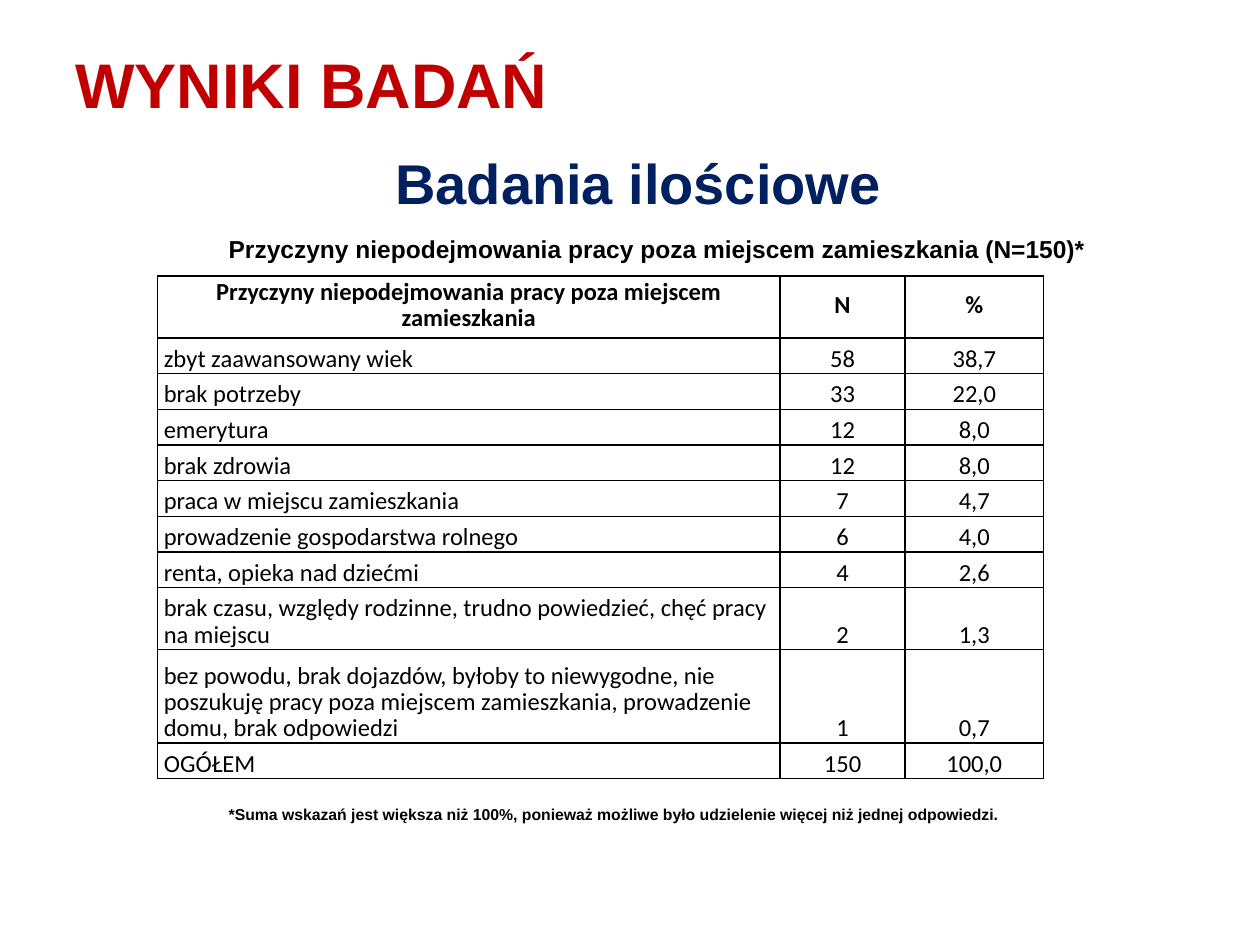
from lxml import etree
from pptx import Presentation
from pptx import util as u
from pptx.dml.color import RGBColor
from pptx.enum import text
from pptx.oxml import ns

PX = u.Inches(1) // 120
COLORS = {"title": "C00000", "subtitle": "002060", "text": "000000"}
ALIGN, ANCHOR = text.PP_ALIGN, text.MSO_ANCHOR

COLUMN_WIDTHS = [593, 119, 132]
ROW_HEIGHTS = [59] + [34] * 7 + [59, 89, 34]
ROWS = [
    ("Przyczyny niepodejmowania pracy poza miejscem zamieszkania", "N", "%"),
    ("zbyt zaawansowany wiek", "58", "38,7"),
    ("brak potrzeby", "33", "22,0"),
    ("emerytura", "12", "8,0"),
    ("brak zdrowia", "12", "8,0"),
    ("praca w miejscu zamieszkania", "7", "4,7"),
    ("prowadzenie gospodarstwa rolnego", "6", "4,0"),
    ("renta, opieka nad dziećmi", "4", "2,6"),
    ("brak czasu, względy rodzinne, trudno powiedzieć, chęć pracy na miejscu", "2", "1,3"),
    ("bez powodu, brak dojazdów, byłoby to niewygodne, nie poszukuję pracy poza miejscem "
     "zamieszkania, prowadzenie domu, brak odpowiedzi", "1", "0,7"),
    ("OGÓŁEM", "150", "100,0"),
]


def to_emu(*lengths):
    return [length * PX for length in lengths]


def set_all(target, values):
    for name, value in values.items():
        setattr(target, name, value)


def write(para, words, color="text", **font):
    span = para.add_run()
    span.text = words
    set_all(span.font, font)
    span.font.color.rgb = RGBColor.from_string(COLORS[color])


def add_text(page, box, words, size, color="text", align=ALIGN.LEFT):
    frame = page.shapes.add_textbox(*to_emu(*box)).text_frame
    set_all(frame, {"word_wrap": True, "vertical_anchor": ANCHOR.MIDDLE})
    para = frame.paragraphs[0]
    para.alignment = align
    write(para, words, color, name="Arial", size=u.Pt(size), bold=True)


def add_borders(cell):
    properties = cell._tc.get_or_add_tcPr()
    for position, side in enumerate(("lnL", "lnR", "lnT", "lnB")):
        line = etree.Element(ns.qn(f"a:{side}"), w=str(u.Pt(1)))
        fill = etree.SubElement(line, ns.qn("a:solidFill"))
        etree.SubElement(fill, ns.qn("a:srgbClr"), val=COLORS["text"])
        properties.insert(position, line)


def fill_cell(cell, words, header, centered):
    cell.fill.background()
    set_all(cell, {
        "margin_left": 6 * PX, "margin_right": 6 * PX, "margin_top": 0, "margin_bottom": 0,
        "vertical_anchor": ANCHOR.MIDDLE if header else ANCHOR.BOTTOM,
    })
    para = cell.text_frame.paragraphs[0]
    set_all(para, {"alignment": ALIGN.CENTER if centered else ALIGN.LEFT,
                   "line_spacing": u.Pt(15)})
    write(para, words, name="Calibri", size=u.Pt(14), bold=header)
    add_borders(cell)


def add_reasons_table(page, left, top):
    box = to_emu(left, top, sum(COLUMN_WIDTHS), sum(ROW_HEIGHTS))
    table = page.shapes.add_table(len(ROWS), len(COLUMN_WIDTHS), *box).table
    set_all(table, {"first_row": False, "horz_banding": False})
    for column, width in zip(table.columns, COLUMN_WIDTHS):
        column.width = width * PX
    for row, height in zip(table.rows, ROW_HEIGHTS):
        row.height = height * PX
    for r, values in enumerate(ROWS):
        for c, words in enumerate(values):
            fill_cell(table.cell(r, c), words, header=r == 0, centered=r == 0 or c > 0)


def add_results_page(deck):
    page = deck.slides.add_slide(deck.slide_layouts[6])
    add_reasons_table(page, 150, 263)
    add_text(page, (206, 216, 900, 41),
             "Przyczyny niepodejmowania pracy poza miejscem zamieszkania (N=150)*", 14)
    add_text(page, (60, 36, 1080, 86), "WYNIKI BADAŃ", 36, "title")
    add_text(page, (103, 140, 1010, 66), "Badania ilościowe", 32, "subtitle", ALIGN.CENTER)
    add_text(page, (206, 760, 769, 30),
             "*Suma wskazań jest większa niż 100%, ponieważ możliwe było udzielenie "
             "więcej niż jednej odpowiedzi.", 9, align=ALIGN.JUSTIFY)


def main():
    deck = Presentation()
    set_all(deck, {"slide_width": 1200 * PX, "slide_height": 900 * PX})
    add_results_page(deck)
    deck.save("out.pptx")


if __name__ == "__main__":
    main()
